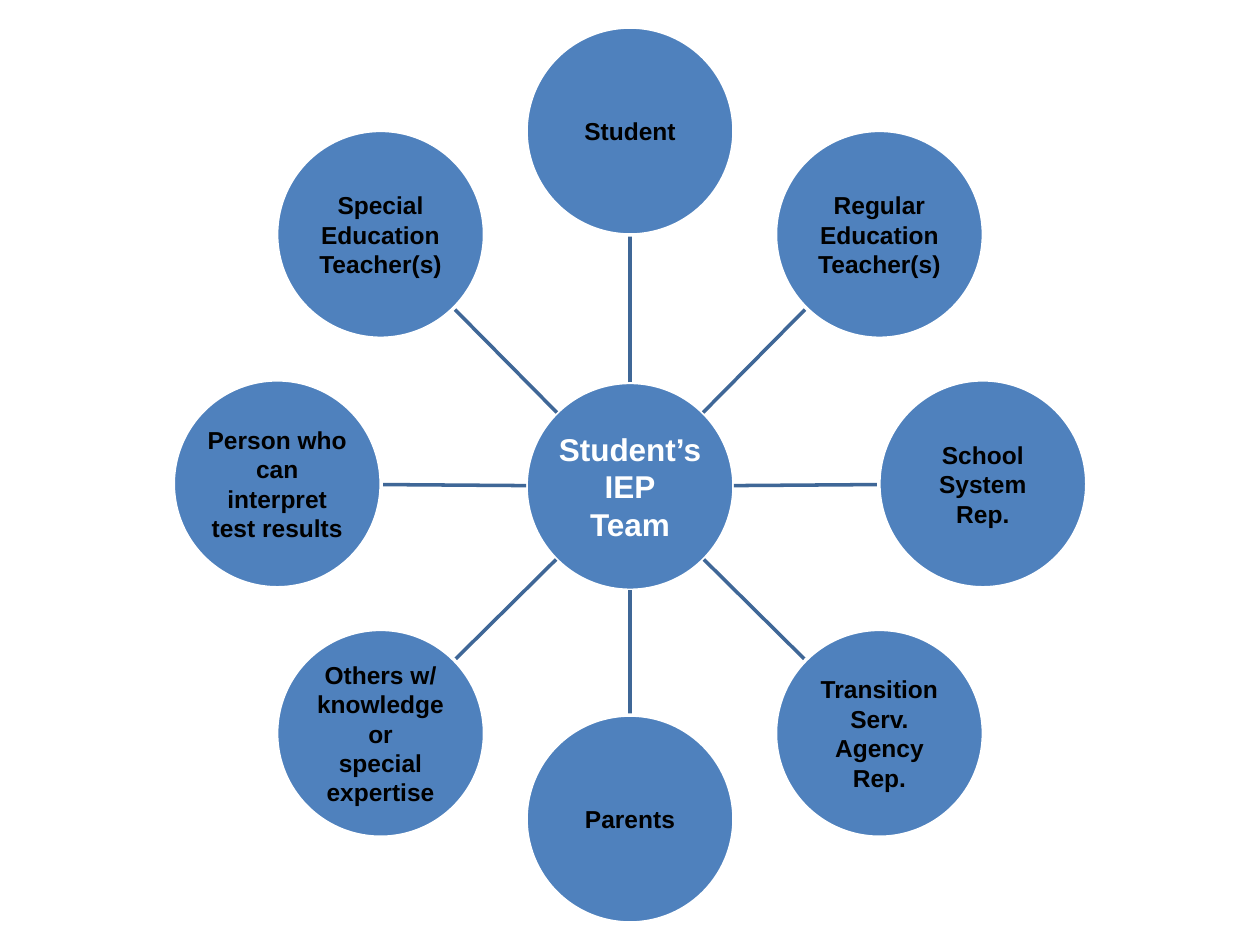
import math
from pptx import Presentation, util as u
from pptx.dml.color import RGBColor
from pptx.enum import shapes, text
from pptx.oxml import xmlchemy
from lxml import etree
from pptx.oxml.ns import qn

THEME = {
    "font": "Arial",
    "circle": RGBColor(0x4F, 0x81, 0xBD),
    "outline": RGBColor(0xFF, 0xFF, 0xFF),
    "spoke": RGBColor(0x3F, 0x67, 0x97),
    "hub_text": RGBColor(0xFF, 0xFF, 0xFF),
    "member_text": RGBColor(0, 0, 0),
    "hub_size": u.Pt(18),
    "member_size": u.Pt(14),
    "line_width": u.Pt(2),
}
DIAMETER = 1.65
HUB = (5, 3.86)
RING_CENTRE = (5, 3.84)
RING_RADIUS = 2.8
PARENTS_RADIUS = 2.66  # the bottom circle sits closer to the hub

# Clockwise from the top
MEMBERS = [
    ["Student"],
    ["Regular", "Education", "Teacher(s)"],
    ["School", "System", "Rep."],
    ["Transition", "Serv. Agency", "Rep."],
    ["Parents"],
    ["Others w/", "knowledge or", "special", "expertise"],
    ["Person who", "can interpret", "test results"],
    ["Special", "Education", "Teacher(s)"],
]


def add_circle(slide, centre, lines, size, color):
    """Add a labelled circle around a centre point, one paragraph per line."""
    left, top = (value - DIAMETER / 2 for value in centre)
    shape = slide.shapes.add_shape(
        shapes.MSO_SHAPE.OVAL, u.Inches(left), u.Inches(top),
        u.Inches(DIAMETER), u.Inches(DIAMETER))
    shape.shadow.inherit = False
    shape.fill.solid()
    shape.fill.fore_color.rgb = THEME["circle"]
    shape.line.color.rgb = THEME["outline"]
    shape.line.width = THEME["line_width"]
    frame = shape.text_frame
    frame.word_wrap = True
    frame.vertical_anchor = text.MSO_ANCHOR.MIDDLE
    frame.margin_left = frame.margin_right = u.Inches(0.01)
    frame.margin_top = frame.margin_bottom = u.Inches(0.01)
    for index, line in enumerate(lines):
        paragraph = frame.add_paragraph() if index else frame.paragraphs[0]
        paragraph.alignment = text.PP_ALIGN.CENTER
        run = paragraph.add_run()
        run.text = line
        run.font.name = THEME["font"]
        run.font.size = size
        run.font.bold = True
        run.font.color.rgb = color


def add_spoke(slide, start, end):
    """Draw the line between the edges of two circles."""
    reach = DIAMETER / 2 / math.dist(start, end)
    step_x, step_y = ((b - a) * reach for a, b in zip(start, end))
    spoke = slide.shapes.add_connector(
        shapes.MSO_CONNECTOR.STRAIGHT,
        u.Inches(start[0] + step_x), u.Inches(start[1] + step_y),
        u.Inches(end[0] - step_x), u.Inches(end[1] - step_y))
    spoke.line.color.rgb = THEME["spoke"]
    spoke.line.width = THEME["line_width"]
    properties = spoke._element.find(qn("p:spPr"))
    etree.SubElement(properties, qn("a:effectLst"))


presentation = Presentation()
presentation.slide_width = u.Inches(10)
presentation.slide_height = u.Inches(7.5)
slide = presentation.slides.add_slide(presentation.slide_layouts[6])

add_circle(slide, HUB, ["Student\u2019s", "IEP", "Team"],
           THEME["hub_size"], THEME["hub_text"])

for index, lines in enumerate(MEMBERS):
    angle = index * math.tau / len(MEMBERS)
    radius = PARENTS_RADIUS if lines == ["Parents"] else RING_RADIUS
    centre = (RING_CENTRE[0] + radius * math.sin(angle),
              RING_CENTRE[1] - radius * math.cos(angle))
    add_spoke(slide, HUB, centre)
    add_circle(slide, centre, lines,
               THEME["member_size"], THEME["member_text"])

presentation.save("out.pptx")
